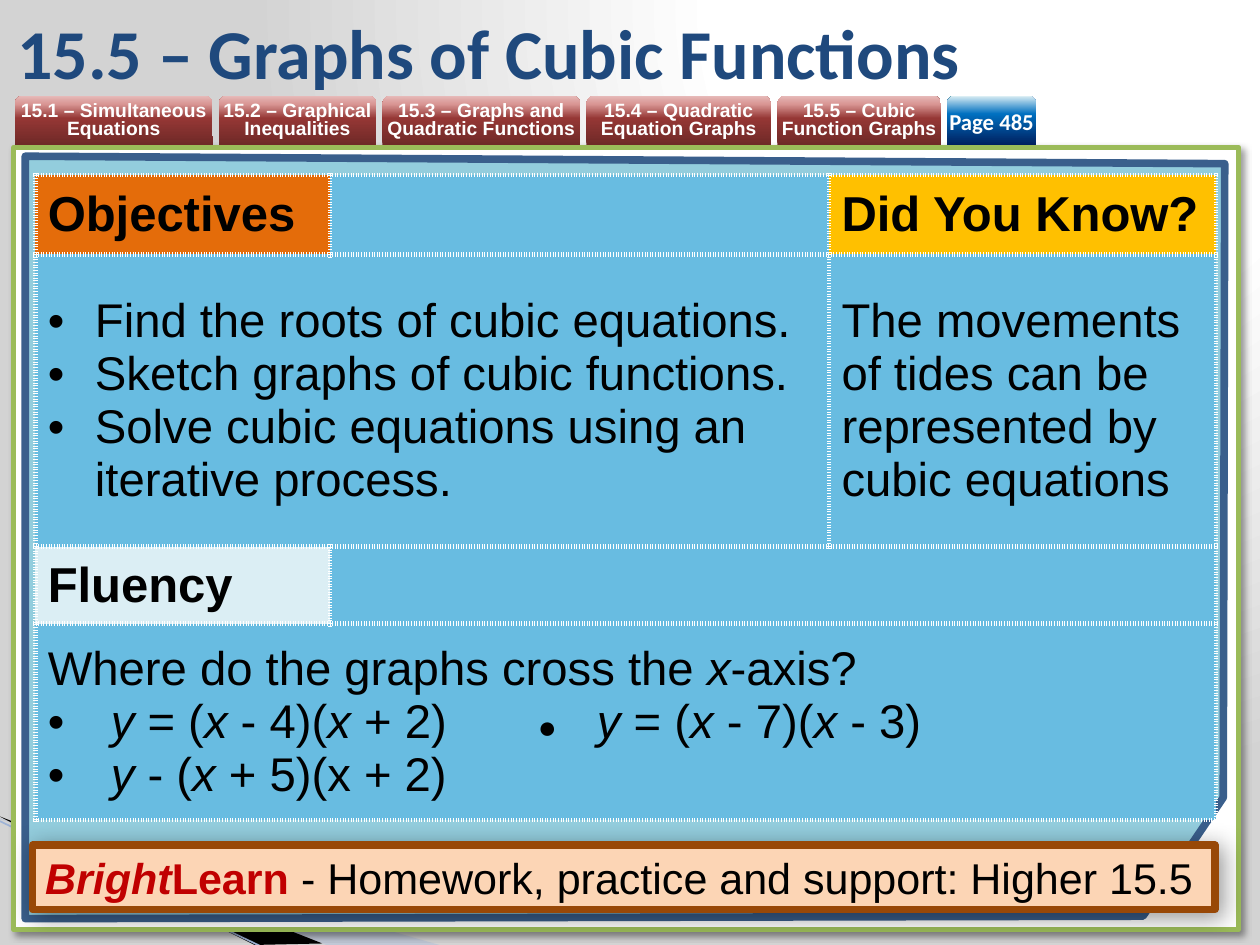
from lxml import etree
from pptx import Presentation
from pptx.dml.color import RGBColor
from pptx.enum import shapes, text
from pptx.oxml import ns
from pptx.util import Cm, Pt

COLORS = {
    "white": "FFFFFF", "black": "000000", "title": "1F497D",
    "panel_edge": "9BBB59", "board": "93CDDD", "board_edge": "3A5F8C",
    "swoosh": "A7B9DB", "swoosh_line": "9EB3D6",
    "cell": "68BCE1", "objectives": "E46C0A", "fact": "FFC000", "fluency": "DBEEF4",
    "footer": "FCD5B5", "footer_edge": "984807", "brand": "C00000",
}
BACKDROP = [(0, "FFFFFF"), (40, "FFFFFF"), (100, "D3D3D3")]
RED_TAB = [(0, "6F2927"), (54, "953735"), (83, "D99694"), (100, "E6B9B8")]
BLUE_TAB = [(0, "002060"), (63, "0070C0"), (100, "DBEEF4")]
UPWARD = '<a:lin ang="16200000" scaled="0"/>'
CIRCLE = '<a:path path="circle"><a:fillToRect l="65000" t="0" r="0" b="98000"/></a:path>'


def rgb(name):
    return RGBColor.from_string(COLORS[name])


def xml(markup):
    """Parse one DrawingML element."""
    tag, rest = markup.split(">", 1)
    slash = "/" if tag.endswith("/") else ""
    return etree.fromstring(f'{tag.rstrip("/")} {ns.nsdecls("a")}{slash}>{rest}')


def set_gradient(fill, parent, stops, direction):
    """Swap a solid fill for a gradient with any number of stops."""
    fill.solid()
    marks = "".join(f'<a:gs pos="{pos * 1000}"><a:srgbClr val="{color}"/></a:gs>'
                    for pos, color in stops)
    solid = parent.find(ns.qn("a:solidFill"))
    parent.replace(solid, xml(f'<a:gradFill rotWithShape="1"><a:gsLst>{marks}</a:gsLst>'
                              f'{direction}</a:gradFill>'))


def style_shape(shape, fill=None, line=None, width=0):
    shape.shadow.inherit = False
    if fill:
        shape.fill.solid()
        shape.fill.fore_color.rgb = rgb(fill)
    if line:
        shape.line.color.rgb = rgb(line)
        shape.line.width = Pt(width)
    else:
        shape.line.fill.background()


def add_box(slide, kind, box, **style):
    shape = slide.shapes.add_shape(kind, *map(Cm, box))
    style_shape(shape, **style)
    return shape


def add_outline(slide, points, **style):
    points = [(Cm(x), Cm(y)) for x, y in points]
    builder = slide.shapes.build_freeform(*points[0])
    builder.add_line_segments(points[1:], close=True)
    shape = builder.convert_to_shape()
    style_shape(shape, **style)
    return shape


def drop_shadow(shape, blur):
    effects = shape._element.spPr.find(ns.qn("a:effectLst"))
    effects.append(xml(
        f'<a:outerShdw blurRad="{Pt(blur)}" dist="{Pt(3)}" dir="2700000" algn="tl" '
        f'rotWithShape="0"><a:srgbClr val="{COLORS["black"]}"><a:alpha val="40000"/>'
        '</a:srgbClr></a:outerShdw>'))


def add_run(paragraph, words, size, color="black", font="Arial", bold=False, italic=False):
    run = paragraph.add_run()
    run.text = words
    run.font.size, run.font.name = Pt(size), font
    run.font.bold, run.font.italic = bold, italic
    run.font.color.rgb = rgb(color)


def set_bullet(paragraph, indent, tabs=()):
    props = paragraph._p.get_or_add_pPr()
    props.set("marL", str(Cm(indent)))
    props.set("indent", str(-Cm(indent)))
    props.append(xml('<a:buFont typeface="Arial"/>'))
    props.append(xml('<a:buChar char="•"/>'))
    if tabs:
        stops = "".join(f'<a:tab pos="{Cm(tab)}" algn="l"/>' for tab in tabs)
        props.append(xml(f"<a:tabLst>{stops}</a:tabLst>"))


def draw_backdrop(slide):
    fill = slide.background.fill
    fill.solid()
    set_gradient(fill, slide._element.find(".//" + ns.qn("p:bgPr")), BACKDROP, CIRCLE)
    # Swoosh in the lower left corner
    swoosh = add_outline(slide, [(-0.03, 16.51), (8.86, 19.05), (6.58, 19.05), (-0.03, 16.48)],
                         fill="swoosh")
    swoosh._element.spPr.find(".//" + ns.qn("a:srgbClr")).append(xml('<a:alpha val="40000"/>'))
    add_outline(slide, [(0, 16.46), (6.5, 19.02), (5.13, 19.05), (0.03, 16.48)], fill="black")
    edge = slide.shapes.add_connector(shapes.MSO_CONNECTOR.STRAIGHT,
                                      *map(Cm, (-0.03, 16.54, 5.31, 19.1)))
    edge.line.color.rgb, edge.line.width = rgb("swoosh_line"), Pt(0.95)
    edge._element.spPr.append(xml("<a:effectLst/>"))


def draw_board(slide, left, top, width, height):
    panel = add_box(slide, shapes.MSO_SHAPE.RECTANGLE, (left, top, width, height),
                    fill="white", line="panel_edge", width=3)
    drop_shadow(panel, 4)
    corners = [(0.23, 0.18), (24.41, 0.33), (24.38, 13.11), (22.76, 15.5), (0.23, 15.55)]
    add_outline(slide, [(left + x, top + y) for x, y in corners],
                fill="board", line="board_edge", width=4.33)


def draw_title(slide, box):
    title = slide.shapes.add_textbox(*map(Cm, box)).text_frame
    title.word_wrap = True
    title.vertical_anchor = text.MSO_ANCHOR.MIDDLE
    add_run(title.paragraphs[0], "15.5 – Graphs of Cubic Functions", 40, "title", "Calibri", True)


def draw_tabs(slide, left, top, height, gap):
    lessons = [("15.1 – Simultaneous Equations", 3.99), ("15.2 – Graphical Inequalities", 3.18),
               ("15.3 – Graphs and Quadratic Functions", 3.99),
               ("15.4 – Quadratic Equation Graphs", 3.73),
               ("15.5 – Cubic Function Graphs", 3.3), ("Page 485", 1.8)]
    for label, width in lessons:
        is_page = label.startswith("Page")
        tab = add_box(slide, shapes.MSO_SHAPE.ROUND_2_SAME_RECTANGLE, (left, top, width, height))
        set_gradient(tab.fill, tab._element.spPr, BLUE_TAB if is_page else RED_TAB, UPWARD)
        frame = tab.text_frame
        frame.word_wrap = True
        frame.margin_left = frame.margin_right = frame.margin_top = frame.margin_bottom = 0
        frame.vertical_anchor = text.MSO_ANCHOR.MIDDLE
        caption = frame.paragraphs[0]
        caption.alignment = text.PP_ALIGN.CENTER
        if is_page:
            add_run(caption, label, 13, "white", "Calibri", True)
        else:
            caption.line_spacing = Pt(10)
            add_run(caption, label, 11, "white", bold=True)
        left += width + gap


def style_cell(cell, fill):
    cell.fill.solid()
    cell.fill.fore_color.rgb = rgb(fill)
    cell.vertical_anchor = text.MSO_ANCHOR.MIDDLE
    for place, side in enumerate("LRTB"):
        cell._tc.tcPr.insert(place, xml(
            f'<a:ln{side} w="{Pt(3)}"><a:solidFill><a:srgbClr val="{COLORS["white"]}"/>'
            f'</a:solidFill><a:prstDash val="sysDot"/></a:ln{side}>'))


def write_lines(cell, lines, indent=0, tabs=(), plain_first=False):
    """Fill a cell; words between asterisks are italic and ● is small."""
    frame = cell.text_frame
    for number, line in enumerate(lines):
        paragraph = frame.add_paragraph() if number else frame.paragraphs[0]
        if indent and (number or not plain_first):
            set_bullet(paragraph, indent, tabs if "\t" in line else ())
        for part, words in enumerate(line.split("*")):
            if words:
                add_run(paragraph, words, 18 if words == "●" else 27, italic=part % 2 == 1 and words != "●")


def draw_table(slide, left, top):
    columns, rows = (5.94, 10.06, 7.8), (1.6, 5.89, 1.55, 3.96)
    grid = slide.shapes.add_table(len(rows), len(columns), Cm(left), Cm(top),
                                  Cm(sum(columns)), Cm(sum(rows))).table
    for column, width in zip(grid.columns, columns):
        column.width = Cm(width)
    for row, height in zip(grid.rows, rows):
        row.height = Cm(height)
    headings = {(0, 0): ("Objectives", "objectives"), (0, 2): ("Did You Know?", "fact"),
                (2, 0): ("Fluency", "fluency")}
    for r in range(len(rows)):
        for c in range(len(columns)):
            heading, fill = headings.get((r, c), ("", "cell"))
            style_cell(grid.cell(r, c), fill)
            if heading:
                add_run(grid.cell(r, c).text_frame.paragraphs[0], heading, 28, bold=True)
    for first, last in [((1, 0), (1, 1)), ((2, 1), (2, 2)), ((3, 0), (3, 2))]:
        grid.cell(*first).merge(grid.cell(*last))
    write_lines(grid.cell(1, 0), ["Find the roots of cubic equations.",
                                  "Sketch graphs of cubic functions.",
                                  "Solve cubic equations using an iterative process."], 0.95)
    write_lines(grid.cell(1, 2), ["The movements of tides can be represented by cubic equations"])
    write_lines(grid.cell(3, 0), ["Where do the graphs cross the *x*-axis?",
                                  "*y *= (*x* - 4)(*x* + 2)\t*●*\t*y* = (*x *- 7)(*x *- 3)",
                                  "*y *- (*x* + 5)(x + 2)"], 1.27, (9.88, 11.07), True)


def draw_footer(slide, box):
    footer = add_box(slide, shapes.MSO_SHAPE.RECTANGLE, box,
                     fill="footer", line="footer_edge", width=4.33)
    drop_shadow(footer, 13)
    frame = footer.text_frame
    frame.word_wrap = True
    frame.vertical_anchor = text.MSO_ANCHOR.MIDDLE
    homework = frame.paragraphs[0]
    homework.alignment = text.PP_ALIGN.LEFT
    add_run(homework, "Bright", 24.6, "brand", bold=True, italic=True)
    add_run(homework, "Learn ", 24.6, "brand", bold=True)
    add_run(homework, "- Homework, practice and support: Higher 15.5", 24.6)


def main():
    deck = Presentation()
    deck.slide_width, deck.slide_height = Cm(25.4), Cm(19.05)
    slide = deck.slides.add_slide(deck.slide_layouts[6])
    draw_backdrop(slide)
    draw_board(slide, 0.28, 2.97, 24.69, 15.77)
    draw_title(slide, (0.1, 0.13, 21, 1.8))
    draw_tabs(slide, 0.3, 1.93, 0.99, 0.12)
    draw_table(slide, 0.71, 3.53)
    draw_footer(slide, (0.66, 17.04, 23.83, 1.3))
    deck.save("out.pptx")


if __name__ == "__main__":
    main()
